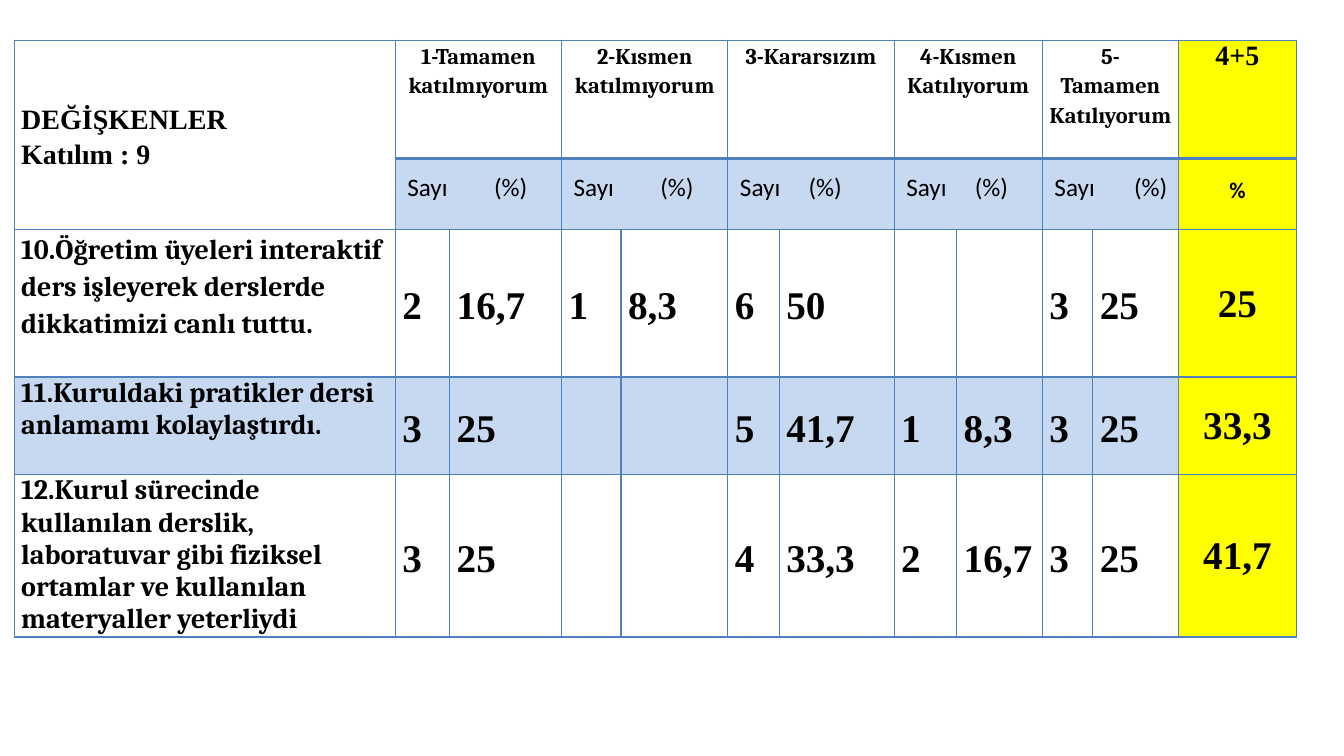
import pptx
import pptx.util
import pptx.dml.color
import pptx.enum.text
import pptx.oxml
from pptx.oxml.ns import nsdecls

Inches = pptx.util.Inches
Pt = pptx.util.Pt
ANCHOR = pptx.enum.text.MSO_ANCHOR
ALIGN = pptx.enum.text.PP_ALIGN

BORDER = "4F81BD"
BAND = "C6D9F1"
TOTAL = "FFFF00"
COLUMNS = [3.78, 0.54, 1.11, 0.59, 1.06, 0.51, 1.14, 0.62, 0.85, 0.5, 0.85, 1.17]
ROWS = [1.17, 0.71, 1.46, 0.97, 1.61]
ANSWERS = [
    ("1-Tamamen katılmıyorum", 0.86),
    ("2-Kısmen katılmıyorum", 0.86),
    ("3-Kararsızım", 0.68),
    ("4-Kısmen Katılıyorum", 0.68),
    ("5- Tamamen Katılıyorum", 0.79),
]
QUESTIONS = [
    ("10.Öğretim üyeleri interaktif ders işleyerek derslerde dikkatimizi canlı tuttu.",
     ["2", "16,7", "1", "8,3", "6", "50", "", "", "3", "25"], "25"),
    ("11.Kuruldaki pratikler dersi anlamamı kolaylaştırdı.",
     ["3", "25", "", "", "5", "41,7", "1", "8,3", "3", "25"], "33,3"),
    ("12.Kurul sürecinde kullanılan derslik, laboratuvar gibi fiziksel ortamlar "
     "ve kullanılan materyaller yeterliydi",
     ["3", "25", "", "", "4", "33,3", "2", "16,7", "3", "25"], "41,7"),
]

TITLE = {"name": "Times New Roman", "size": Pt(20), "bold": True}
ANSWER = {"name": "Cambria", "size": Pt(16), "bold": True}
UNIT = {"name": "Calibri", "size": Pt(18), "bold": False}
PERCENT = {"name": "Calibri", "size": Pt(16), "bold": True}
QUESTION = {"name": "Cambria", "size": Pt(20), "bold": True}
VALUE = {"name": "Times New Roman", "size": Pt(28), "bold": True}

MIDDLE = {"vertical_anchor": ANCHOR.MIDDLE}
TIGHT = {"margin_left": Inches(0.01), "margin_right": Inches(0.01),
         "margin_top": Inches(0.01), **MIDDLE}
LOOSE = {"line_spacing": 1.15}
CENTRE = {"alignment": ALIGN.CENTER}


def colour(value):
    return pptx.dml.color.RGBColor.from_string(value)


def apply(target, values):
    for name, value in values.items():
        setattr(target, name, value)


def add_borders(cell, widths):
    for side, width in widths.items():
        line = pptx.oxml.parse_xml(
            f'<a:ln{side} {nsdecls("a")} w="{Pt(width)}"><a:solidFill>'
            f'<a:srgbClr val="{BORDER}"/></a:solidFill></a:ln{side}>')
        cell._tc.get_or_add_tcPr().append(line)


def style_cell(cell, row, column):
    apply(cell, {"margin_left": Inches(0.07), "margin_right": Inches(0.07),
                 "margin_top": 0, "margin_bottom": 0})
    top = 2.25 if row == 1 and column else 1
    bottom = 2.25 if row == 0 and column else 1
    add_borders(cell, {"L": 1, "R": 1, "T": top, "B": bottom})
    fill = TOTAL if column == len(COLUMNS) - 1 else BAND if row in (1, 3) and (column or row == 3) else None
    if fill:
        cell.fill.solid()
        cell.fill.fore_color.rgb = colour(fill)
    else:
        cell.fill.background()


def write(cell, text, font, para_format, cell_format):
    apply(cell, cell_format)
    cell.text_frame.text = text
    for para in cell.text_frame.paragraphs:
        apply(para, para_format)
        for span in para.runs:
            apply(span.font, font)
            span.font.color.rgb = colour("000000")


def add_tab_stop(cell, position):
    stops = pptx.oxml.parse_xml(
        f'<a:tabLst {nsdecls("a")}><a:tab pos="{Inches(position)}" algn="l"/></a:tabLst>')
    cell.text_frame.paragraphs[0]._p.get_or_add_pPr().append(stops)


def add_grid(page):
    frame = page.shapes.add_table(len(ROWS), len(COLUMNS), Inches(0.14), Inches(0.4),
                                  Inches(sum(COLUMNS)), Inches(sum(ROWS)))
    table = frame.table
    apply(table, {"first_row": False, "horz_banding": False})
    for column, width in enumerate(COLUMNS):
        table.columns[column].width = Inches(width)
    for row, height in enumerate(ROWS):
        table.rows[row].height = Inches(height)
        for column in range(len(COLUMNS)):
            style_cell(table.cell(row, column), row, column)
    return table


def fill_header(table):
    table.cell(0, 0).merge(table.cell(1, 0))
    write(table.cell(0, 0), "DEĞİŞKENLER\nKatılım : 9", TITLE, LOOSE, MIDDLE)
    for index, (answer, tab) in enumerate(ANSWERS):
        column = 1 + 2 * index
        for row in range(2):
            table.cell(row, column).merge(table.cell(row, column + 1))
        write(table.cell(0, column), answer, ANSWER, {**LOOSE, **CENTRE}, {})
        unit = table.cell(1, column)
        write(unit, "Sayı\t(%)", UNIT, {"line_spacing": Pt(13)},
              {**MIDDLE, "margin_left": Inches(0.12)})
        add_tab_stop(unit, tab)
    last = len(COLUMNS) - 1
    write(table.cell(0, last), "4+5", TITLE, CENTRE, {})
    write(table.cell(1, last), "%", PERCENT, {**CENTRE, "line_spacing": Pt(15)}, MIDDLE)


def fill_questions(table):
    for row, (question, values, total) in enumerate(QUESTIONS, 2):
        write(table.cell(row, 0), question, QUESTION, LOOSE if row == 2 else {}, {})
        for column, value in enumerate(values, 1):
            if value:
                write(table.cell(row, column), value, VALUE, LOOSE, MIDDLE)
        write(table.cell(row, len(COLUMNS) - 1), total, VALUE, CENTRE, TIGHT)


def main():
    deck = pptx.Presentation()
    apply(deck, {"slide_width": Inches(13.33), "slide_height": Inches(7.5)})
    page = deck.slides.add_slide(deck.slide_layouts[6])
    table = add_grid(page)
    fill_header(table)
    fill_questions(table)
    deck.save("out.pptx")


if __name__ == "__main__":
    main()
